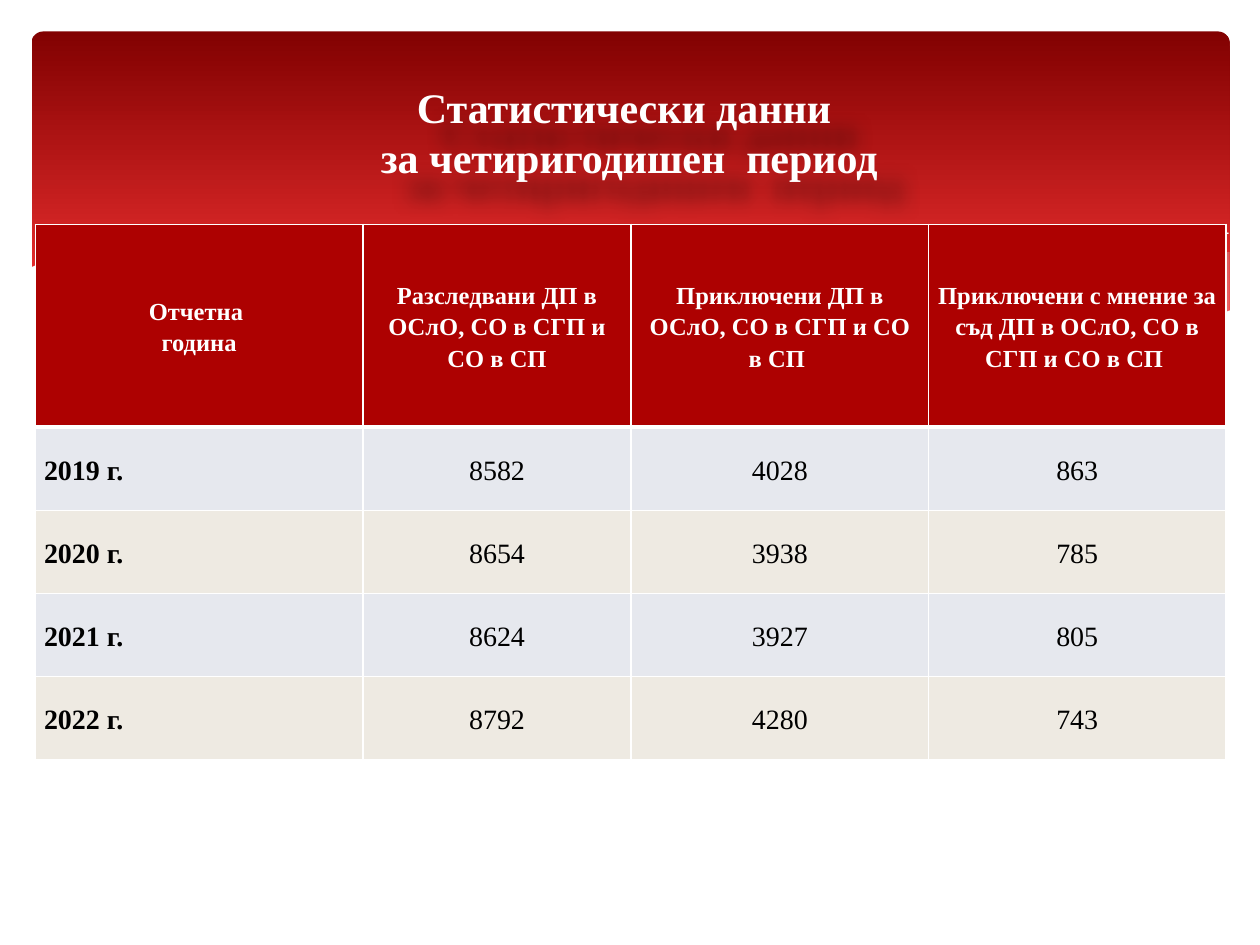
from lxml.etree import SubElement
from pptx import Presentation
from pptx.dml.color import RGBColor
from pptx.enum.shapes import MSO_SHAPE
from pptx.enum.text import MSO_ANCHOR, PP_ALIGN
from pptx.oxml import parse_xml
from pptx.oxml.ns import nsdecls, qn
from pptx.util import Inches, Pt

FONT = "Times New Roman"
COLORS = {
    "white": "FFFFFF", "black": "000000", "header": "AD0101",
    "odd": "E6E8EE", "even": "EEEAE2", "wave": "DEDEE0",
    "dark_red": "820101", "light_red": "FE3737",
}
TITLE = "Статистически данни \vза четиригодишен  период"
COL_WIDTHS = [2.6, 2.13, 2.36, 2.36]
ROW_HEIGHTS = [1.61] + [0.66] * 4
ROWS = [
    ["Отчетна \nгодина",
     "Разследвани ДП в ОСлО, СО в СГП и СО в СП",
     "Приключени ДП в ОСлО, СО в СГП и СО в СП ",
     "Приключени с мнение за съд ДП в ОСлО, СО в СГП и СО в СП "],
    ["2019 г.", "8582", "4028", "863"],
    ["2020 г.", "8654", "3938", "785"],
    ["2021 г.", "8624", "3927", "805"],
    ["2022 г.", "8792", "4280", "743"],
]
RIGHT_WAVE = [
    (975, 200), (948, 204), (921, 210), (891, 216), (861, 223), (805, 237),
    (753, 248), (706, 257), (661, 265), (691, 269), (719, 272), (745, 275),
    (769, 277), (803, 278), (835, 277), (863, 275), (889, 272), (913, 267),
    (935, 262), (949, 257), (963, 252), (976, 247), (976, 200),
]
MIDDLE_WAVE = [
    (893, 273), (866, 269), (807, 260), (741, 247), (668, 231), (629, 222),
    (598, 214), (569, 208), (541, 203), (514, 198), (489, 194), (442, 189),
    (399, 186), (361, 185), (328, 187), (286, 191), (323, 196), (362, 203),
    (404, 211), (449, 222), (491, 232), (530, 240), (566, 248), (601, 255),
    (634, 261), (665, 266), (695, 270), (722, 274), (748, 276), (773, 277),
    (807, 278), (838, 278), (867, 276),
]
LONG_CURVE = [
    (309, 195), (328, 192), (353, 189), (387, 187), (433, 187), (469, 189),
    (510, 192), (556, 197), (608, 204), (665, 213), (727, 226), (795, 241),
    (869, 261), (907, 272),
]
SHORT_CURVE = [
    (613, 257), (653, 246), (695, 235), (748, 223), (806, 210), (866, 199),
    (895, 194), (924, 190), (951, 187), (975, 185),
]
WHITE_WAVE = [
    (977, 246), (959, 253), (940, 259), (920, 265), (899, 269), (875, 273),
    (850, 275), (823, 277), (793, 276), (761, 275), (726, 272), (688, 268),
    (648, 262), (603, 254), (555, 245), (503, 233), (447, 220), (391, 207),
    (340, 197), (292, 190), (250, 186), (211, 184), (177, 184), (146, 185),
    (119, 187), (95, 191), (76, 195), (59, 199), (46, 203), (36, 207),
    (23, 213), (23, 329), (977, 329),
]


def rgb(name):
    """Return the named palette colour."""
    return RGBColor.from_string(COLORS[name])


def add_banner(shapes):
    """Add the rounded gradient banner behind the title."""
    sp = shapes.add_shape(MSO_SHAPE.ROUNDED_RECTANGLE, Inches(0.25), Inches(0.25),
                          Inches(9.51), Inches(2.7))
    sp.adjustments[0] = 0.034
    sp.shadow.inherit = False
    sp.line.fill.background()
    sp.fill.gradient()
    sp.fill.gradient_angle = 270
    for stop, position, name in zip(sp.fill.gradient_stops, (0, 0.9),
                                    ("dark_red", "light_red")):
        stop.position = position
        stop.color.rgb = rgb(name)


def add_outline(shapes, points, closed):
    """Add a freeform through points given in hundredths of an inch."""
    builder = shapes.build_freeform(*points[0], scale=Inches(0.01))
    builder.add_line_segments(points[1:], close=closed)
    sp = builder.convert_to_shape()
    sp.shadow.inherit = False
    return sp


def add_wave(shapes, points, color, opacity=100):
    """Add a filled wave with the given opacity in percent."""
    sp = add_outline(shapes, points, True)
    sp.line.fill.background()
    sp.fill.solid()
    sp.fill.fore_color.rgb = rgb(color)
    if opacity < 100:
        clr = sp.fill._xPr.find(qn("a:solidFill"))[0]
        SubElement(clr, qn("a:alpha"), val=str(opacity * 1000))


def add_curve(shapes, points):
    """Add a white hairline curve."""
    sp = add_outline(shapes, points, False)
    sp.fill.background()
    sp.line.color.rgb = rgb("white")
    sp.line.width = Pt(0)


def format_text(tf, size, color, bold, align):
    """Format every paragraph and run of a text frame."""
    for p in tf.paragraphs:
        p.alignment = align
        for r in p.runs:
            r.font.name = FONT
            r.font.size = Pt(size)
            r.font.bold = bold
            r.font.color.rgb = rgb(color)


def set_borders(cell, widths):
    """Give a cell white borders, left, right, top and bottom, in points."""
    tc_pr = cell._tc.get_or_add_tcPr()
    for i, (side, width) in enumerate(zip("LRTB", widths)):
        tc_pr.insert(i, parse_xml(
            f'<a:ln{side} {nsdecls("a")} w="{Pt(width)}"><a:solidFill>'
            f'<a:srgbClr val="{COLORS["white"]}"/></a:solidFill></a:ln{side}>'))


def fill_cell(cell, text, row, col):
    """Write and style one table cell by its place in the grid."""
    header = row == 0
    cell.text = text
    cell.vertical_anchor = MSO_ANCHOR.MIDDLE
    cell.margin_left = cell.margin_right = Inches(0.07)
    cell.margin_top = cell.margin_bottom = 0
    format_text(cell.text_frame, 14 if header else 16,
                "white" if header else "black", header or col == 0,
                PP_ALIGN.CENTER if header or col else PP_ALIGN.LEFT)
    for p in cell.text_frame.paragraphs:
        p.line_spacing = 1.15
    cell.fill.solid()
    cell.fill.fore_color.rgb = rgb("header" if header else "odd" if row % 2 else "even")
    set_borders(cell, (1, 1, 3 if row == 1 else 1, 3 if header else 1))


def add_statistics(shapes):
    """Add the table of yearly figures."""
    table = shapes.add_table(len(ROWS), len(COL_WIDTHS), Inches(0.28), Inches(1.78),
                             Inches(sum(COL_WIDTHS)), Inches(sum(ROW_HEIGHTS))).table
    for column, width in zip(table.columns, COL_WIDTHS):
        column.width = Inches(width)
    for i, (values, height) in enumerate(zip(ROWS, ROW_HEIGHTS)):
        table.rows[i].height = Inches(height)
        for j, text in enumerate(values):
            fill_cell(table.cell(i, j), text, i, j)


def place_title(shapes):
    """Format the title, shade it softly and bring it to the front."""
    sp = shapes.title
    sp.left, sp.top, sp.width, sp.height = map(Inches, (0.43, 0.36, 9.13, 1.37))
    tf = sp.text_frame
    tf.text = TITLE
    tf.word_wrap = True
    tf.vertical_anchor = MSO_ANCHOR.MIDDLE
    format_text(tf, 24, "white", True, PP_ALIGN.CENTER)
    sp._element.spPr.append(parse_xml(
        f'<a:effectLst {nsdecls("a")}><a:outerShdw blurRad="{Inches(0.15)}" '
        f'dist="{Inches(0.28)}" dir="2700000"><a:srgbClr val="{COLORS["black"]}">'
        '<a:alpha val="40000"/></a:srgbClr></a:outerShdw></a:effectLst>'))
    shapes._spTree.append(sp._element)


def main():
    """Build the slide and save it."""
    prs = Presentation()
    prs.slide_width, prs.slide_height = Inches(10), Inches(7.5)
    s = prs.slides.add_slide(prs.slide_layouts[5])
    add_banner(s.shapes)
    waves = s.shapes.add_group_shape().shapes
    add_wave(waves, RIGHT_WAVE, "wave", 29)
    add_wave(waves, MIDDLE_WAVE, "wave", 40)
    add_curve(waves, LONG_CURVE)
    add_curve(waves, SHORT_CURVE)
    add_wave(waves, WHITE_WAVE, "white")
    add_statistics(s.shapes)
    place_title(s.shapes)
    prs.save("out.pptx")


if __name__ == "__main__":
    main()
